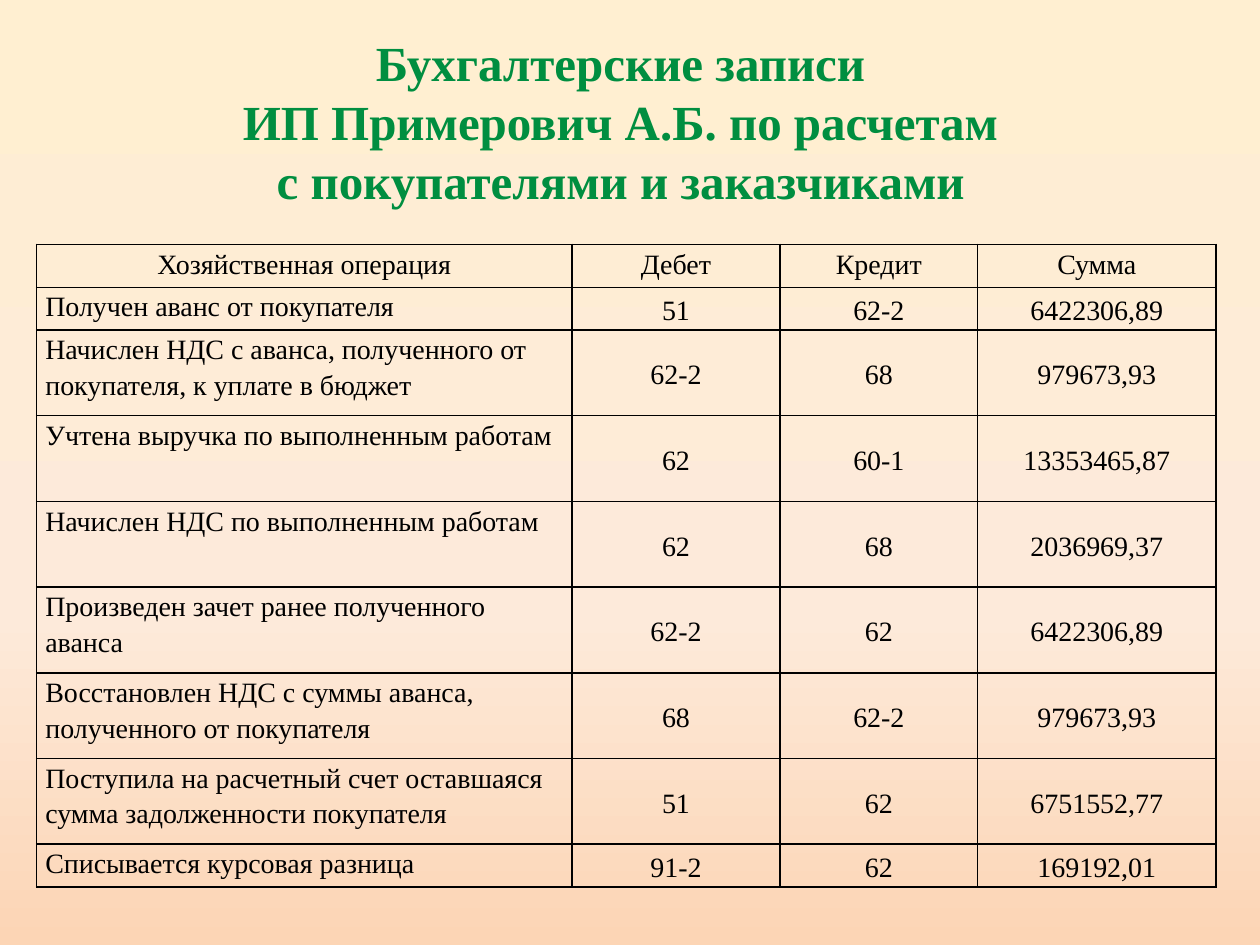
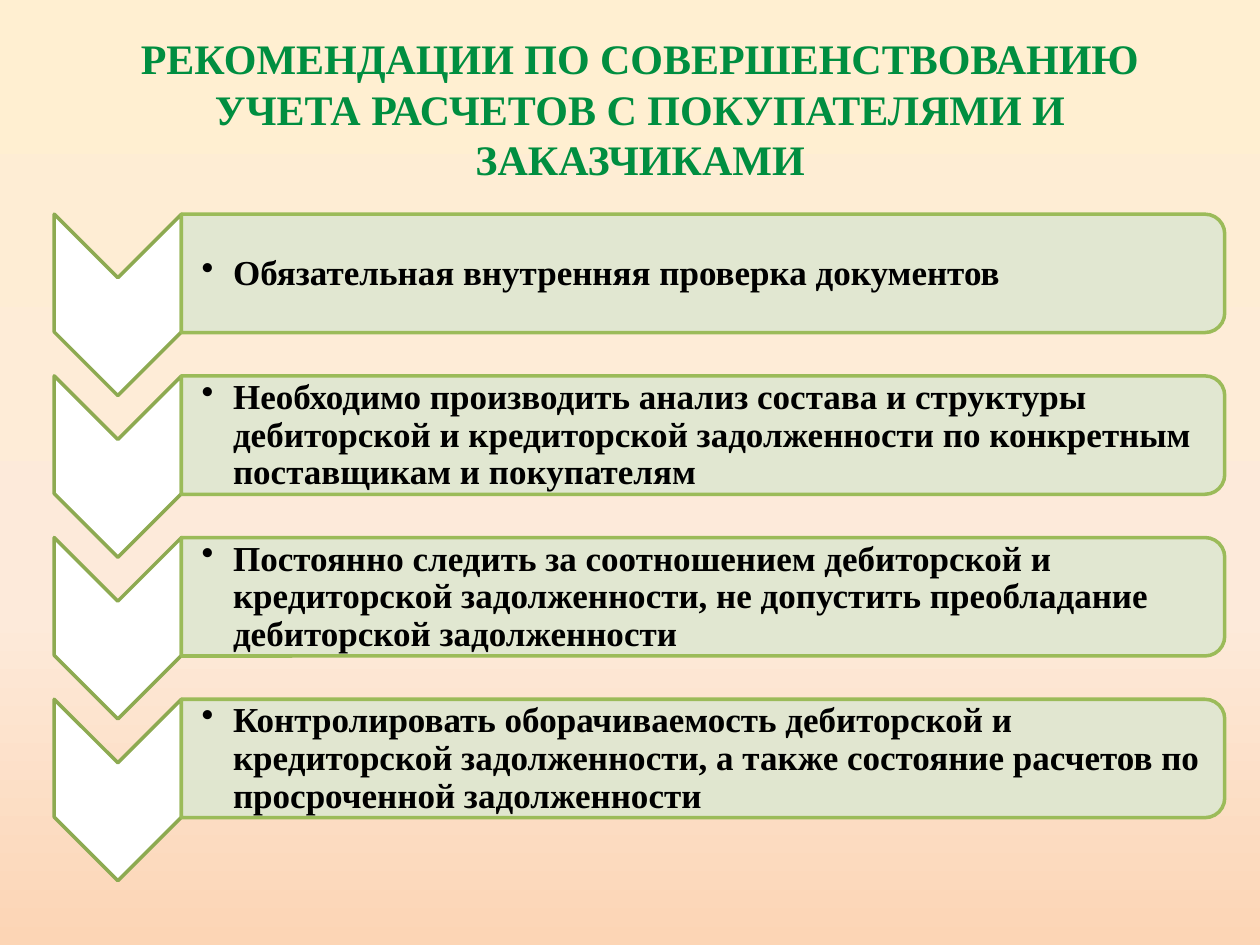
from lxml import etree
from pptx import Presentation
from pptx import util as u
from pptx.dml.color import RGBColor
from pptx.enum import shapes, text
from pptx.oxml import ns

FONT = "Times New Roman"
BLACK, WHITE, TITLE_GREEN = "000000", "FFFFFF", "008E40"
CHEVRON_LINE, PANEL_LINE, PANEL_FILL = "8DAA51", "9BBB59", "DEE7D1"
BACKGROUND_STOPS = [(0, "FFEFD1"), (65, "FDEADA"), (100, "FCD5B5")]

ENTRIES_TITLE = "Бухгалтерские записи\nИП Примерович А.Б. по расчетам\nс покупателями и заказчиками"
ADVICE_TITLE = "РЕКОМЕНДАЦИИ ПО СОВЕРШЕНСТВОВАНИЮ УЧЕТА РАСЧЕТОВ С ПОКУПАТЕЛЯМИ И ЗАКАЗЧИКАМИ"

COLUMN_WIDTHS = [4.25, 1.65, 1.57, 1.89]
ROW_LINES = [1, 1, 2, 2, 2, 2, 2, 2, 1]
LINE_HEIGHT = 0.34
ENTRIES = [
    ("Хозяйственная операция", "Дебет", "Кредит", "Сумма"),
    ("Получен аванс от покупателя", "51", "62-2", "6422306,89"),
    ("Начислен НДС с аванса, полученного от покупателя, к уплате в бюджет", "62-2", "68", "979673,93"),
    ("Учтена выручка по выполненным работам", "62", "60-1", "13353465,87"),
    ("Начислен НДС по выполненным работам", "62", "68", "2036969,37"),
    ("Произведен зачет ранее полученного аванса", "62-2", "62", "6422306,89"),
    ("Восстановлен НДС с суммы аванса, полученного от покупателя", "68", "62-2", "979673,93"),
    ("Поступила на расчетный счет оставшаяся сумма задолженности покупателя", "51", "62", "6751552,77"),
    ("Списывается курсовая разница", "91-2", "62", "169192,01"),
]
RECOMMENDATIONS = [
    "Обязательная внутренняя проверка документов",
    "Необходимо производить анализ состава и структуры дебиторской и кредиторской "
    "задолженности по конкретным поставщикам и покупателям",
    "Постоянно следить за соотношением дебиторской и кредиторской задолженности, "
    "не допустить преобладание дебиторской задолженности",
    "Контролировать оборачиваемость дебиторской и кредиторской задолженности, "
    "а также состояние расчетов по просроченной задолженности",
]
FIRST_TOP, STEP = 1.7, 3.85 / 3


def color(hex_value):
    """Turn a hex string into a colour."""
    return RGBColor.from_string(hex_value)


def set_all(target, values):
    """Set every attribute named in a dict."""
    for name, value in values.items():
        setattr(target, name, value)


def add_element(parent, tag, **attributes):
    """Append a DrawingML element."""
    return etree.SubElement(parent, ns.qn(tag), attributes)


def set_background(master):
    """Give the master its vertical three-stop gradient."""
    fill = master.background.fill
    fill.gradient()
    fill.gradient_angle = 270
    stops = master.element.find(".//" + ns.qn("a:gsLst"))
    for old_stop in list(stops):
        stops.remove(old_stop)
    for position, hex_value in BACKGROUND_STOPS:
        stop = add_element(stops, "a:gs", pos=str(position * 1000))
        add_element(stop, "a:srgbClr", val=hex_value)


def format_text(frame, size, hex_value, bold, frame_values, paragraph_values):
    """Format a text frame with its paragraphs and font."""
    set_all(frame, frame_values)
    for paragraph in frame.paragraphs:
        set_all(paragraph, paragraph_values)
        for run in paragraph.runs:
            set_all(run.font, {"name": FONT, "size": u.Pt(size), "bold": bold})
            run.font.color.rgb = color(hex_value)


def add_titled_slide(presentation, title, box, size):
    """Add a slide with its green title in the given box."""
    slide = presentation.slides.add_slide(presentation.slide_layouts[5])
    shape = slide.shapes.title
    set_all(shape, dict(zip(("left", "top", "width", "height"), map(u.Inches, box))))
    shape.text_frame.text = title
    format_text(
        shape.text_frame, size, TITLE_GREEN, True,
        {"word_wrap": True, "auto_size": text.MSO_AUTO_SIZE.NONE, "vertical_anchor": text.MSO_ANCHOR.TOP},
        {"alignment": text.PP_ALIGN.CENTER},
    )
    return slide


def add_cell_borders(cell):
    """Draw thin black lines on all sides of a cell."""
    properties = cell._tc.get_or_add_tcPr()
    for index, side in enumerate(("a:lnL", "a:lnR", "a:lnT", "a:lnB")):
        line = etree.Element(ns.qn(side), w=str(u.Pt(1)))
        add_element(add_element(line, "a:solidFill"), "a:srgbClr", val=BLACK)
        properties.insert(index, line)


def fill_cell(cell, value, is_header, is_operation):
    """Write and format one cell."""
    cell.text = value
    cell.fill.background()
    top_anchored = is_header or is_operation
    left_aligned = is_operation and not is_header
    set_all(cell, {
        "margin_left": u.Inches(0.07), "margin_right": u.Inches(0.07), "margin_top": 0, "margin_bottom": 0,
        "vertical_anchor": text.MSO_ANCHOR.TOP if top_anchored else text.MSO_ANCHOR.MIDDLE,
    })
    alignment = text.PP_ALIGN.LEFT if left_aligned else text.PP_ALIGN.CENTER
    format_text(cell.text_frame, 16, BLACK, False, {}, {"alignment": alignment, "line_spacing": 1.15})
    add_cell_borders(cell)


def add_entries_table(slide):
    """Add the table of accounting entries."""
    size = u.Inches(sum(COLUMN_WIDTHS)), u.Inches(LINE_HEIGHT * sum(ROW_LINES))
    table = slide.shapes.add_table(
        len(ENTRIES), len(COLUMN_WIDTHS), u.Inches(0.29), u.Inches(1.94), *size).table
    set_all(table, {"first_row": False, "horz_banding": False})
    for column, width in zip(table.columns, COLUMN_WIDTHS):
        column.width = u.Inches(width)
    for row_index, (row, lines, entry) in enumerate(zip(table.rows, ROW_LINES, ENTRIES)):
        row.height = u.Inches(LINE_HEIGHT * lines)
        for column_index, value in enumerate(entry):
            fill_cell(row.cells[column_index], value, row_index == 0, column_index == 0)


def add_turned_shape(slide, kind, box, fill, line):
    """Add a preset turned by 90 degrees that covers the box."""
    left, top, width, height = box
    offset = (width - height) / 2
    shape = slide.shapes.add_shape(
        kind, u.Inches(left + offset), u.Inches(top - offset), u.Inches(height), u.Inches(width))
    shape.rotation = 90
    shape.shadow.inherit = False
    shape.fill.solid()
    shape.fill.fore_color.rgb = color(fill)
    shape.line.color.rgb = color(line)
    shape.line.width = u.Pt(2)
    return shape


def add_bullet_text(slide, sentence, box):
    """Add a bold bulleted sentence."""
    frame = slide.shapes.add_textbox(*map(u.Inches, box)).text_frame
    frame.text = sentence
    margin = u.Inches(0.01)
    format_text(
        frame, 20, BLACK, True,
        {"word_wrap": True, "vertical_anchor": text.MSO_ANCHOR.MIDDLE, "margin_left": u.Inches(0.16),
         "margin_right": margin, "margin_top": margin, "margin_bottom": margin},
        {"line_spacing": 0.9},
    )
    properties = frame.paragraphs[0]._p.get_or_add_pPr()
    properties.set("marL", str(u.Inches(0.25)))
    properties.set("indent", str(u.Inches(-0.25)))
    add_element(properties, "a:buChar", char="•")


def add_recommendation(slide, sentence, top):
    """Add a chevron and the panel beside it."""
    add_turned_shape(
        slide, shapes.MSO_SHAPE.CHEVRON, (0.43, top, 1.01, 1.44), WHITE, CHEVRON_LINE)
    panel = add_turned_shape(
        slide, shapes.MSO_SHAPE.ROUND_2_SAME_RECTANGLE, (1.44, top, 8.28, 0.94), PANEL_FILL, PANEL_LINE)
    fill_color = panel._element.spPr.find(ns.qn("a:solidFill")).find(ns.qn("a:srgbClr"))
    add_element(fill_color, "a:alpha", val="90000")
    add_bullet_text(slide, sentence, (1.44, top + 0.05, 8.24, 0.85))


def main():
    """Build and save the two slides."""
    presentation = Presentation()
    set_all(presentation, {"slide_width": u.Inches(10), "slide_height": u.Inches(7.5)})
    set_background(presentation.slide_master)
    entries_slide = add_titled_slide(presentation, ENTRIES_TITLE, (1.75, 0.21, 6.35, 1.51), 28)
    add_entries_table(entries_slide)
    advice_slide = add_titled_slide(presentation, ADVICE_TITLE, (0.67, 0.21, 8.82, 1.31), 24)
    for index, sentence in enumerate(RECOMMENDATIONS):
        add_recommendation(advice_slide, sentence, FIRST_TOP + index * STEP)
    presentation.save("out.pptx")


if __name__ == "__main__":
    main()
